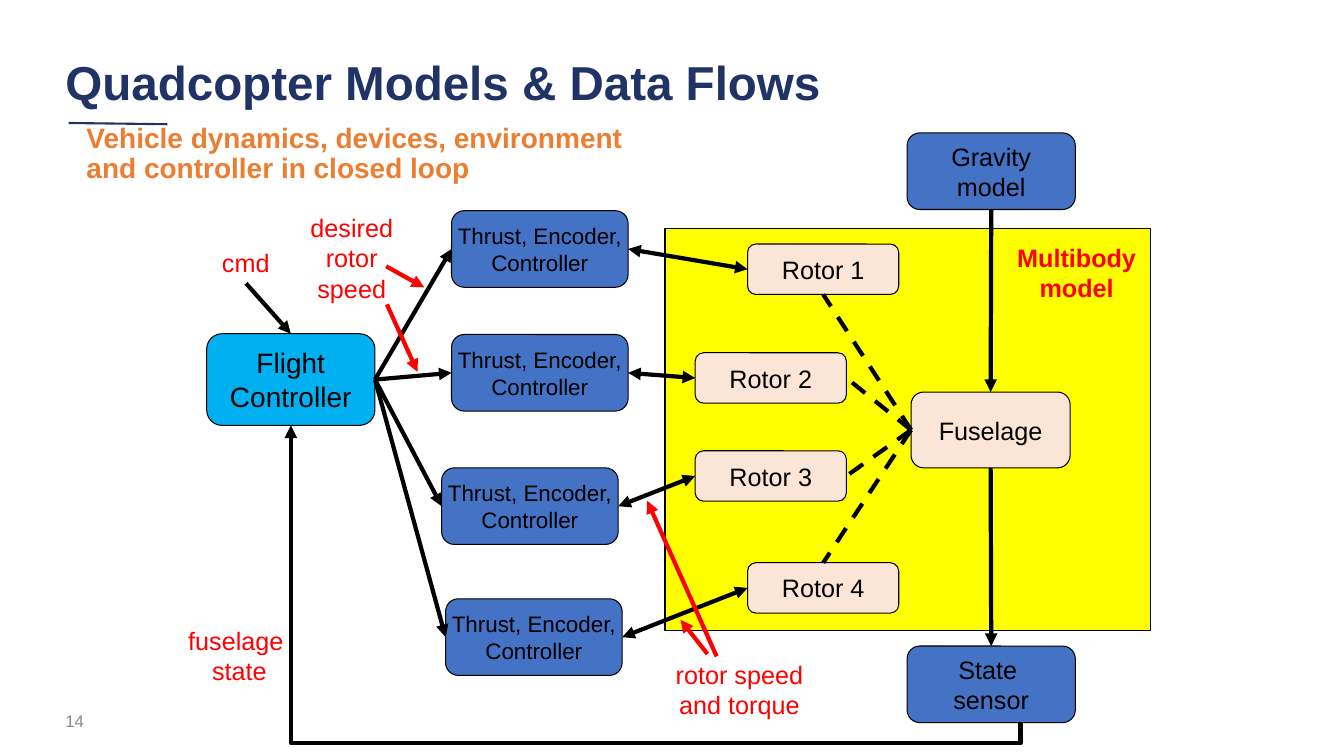
import pptx
import pptx.dml.color
import pptx.enum.dml
import pptx.enum.shapes
import pptx.enum.text
import pptx.oxml
import pptx.oxml.ns
import pptx.util
from pptx.util import Cm

SHAPE = pptx.enum.shapes.MSO_SHAPE
CONNECTOR = pptx.enum.shapes.MSO_CONNECTOR
ALIGN = pptx.enum.text.PP_ALIGN
ANCHOR = pptx.enum.text.MSO_ANCHOR
TOP, LEFT, BOTTOM, RIGHT = range(4)
BLACK, RED, NAVY, BLUE, PEACH = "000000", "FF0000", "213265", "4472C4", "FBE5D6"


def rgb(color):
    return pptx.dml.color.RGBColor.from_string(color)


def write(shape, lines, size, color, bold=False, align=ALIGN.CENTER,
          anchor=ANCHOR.MIDDLE, wrap=False, spacing=None):
    frame = shape.text_frame
    frame.word_wrap = wrap
    frame.vertical_anchor = anchor
    for index, line in enumerate(lines):
        paragraph = frame.paragraphs[0] if index == 0 else frame.add_paragraph()
        paragraph.alignment = align
        if spacing:
            paragraph.line_spacing = spacing
        run = paragraph.add_run()
        run.text = line
        run.font.name = "Arial"
        run.font.size = pptx.util.Pt(size)
        run.font.bold = bold
        run.font.color.rgb = rgb(color)


def add_label(slide, x, y, width, height, lines, size=18, color=RED,
              anchor=ANCHOR.TOP, **style):
    label = slide.shapes.add_textbox(Cm(x), Cm(y), Cm(width), Cm(height))
    write(label, lines, size, color, anchor=anchor, **style)


def add_block(slide, x, y, width, height, fill, lines=(), size=18,
              outline=SHAPE.ROUNDED_RECTANGLE):
    block = slide.shapes.add_shape(outline, Cm(x), Cm(y), Cm(width), Cm(height))
    block.shadow.inherit = False
    block.fill.solid()
    block.fill.fore_color.rgb = rgb(fill)
    block.line.color.rgb = rgb(BLACK)
    block.line.width = pptx.util.Pt(0.75)
    write(block, lines, size, BLACK)
    return block


def add_line(slide, start, end, color=BLACK, width=3, arrows=("tailEnd",),
             dashed=False, kind=CONNECTOR.STRAIGHT):
    line = slide.shapes.add_connector(kind, *start, *end)
    line.line.color.rgb = rgb(color)
    line.line.width = pptx.util.Pt(width)
    if dashed:
        line.line.dash_style = pptx.enum.dml.MSO_LINE.DASH
    stroke = line.line._get_or_add_ln()
    for arrow in arrows:
        stroke.append(pptx.oxml.parse_xml(
            f'<a:{arrow} {pptx.oxml.ns.nsdecls("a")} type="triangle"/>'))
    line._element.spPr.append(pptx.oxml.parse_xml(
        f'<a:effectLst {pptx.oxml.ns.nsdecls("a")}/>'))
    return line


def link(slide, source, source_side, target, target_side, **style):
    line = add_line(slide, (0, 0), (0, 0), **style)
    line.begin_connect(source, source_side)
    line.end_connect(target, target_side)


def point(x, y):
    return Cm(x), Cm(y)


def header(slide, x, y):
    add_line(slide, point(x + 0.33, y + 1.93), point(x + 2.82, y + 1.96),
             NAVY, 1.5, arrows=())
    add_label(slide, x, y, 28.24, 1.93, ["Quadcopter Models & Data Flows"], 34, NAVY,
              ANCHOR.MIDDLE, bold=True, align=ALIGN.LEFT, wrap=True, spacing=0.9)
    add_label(slide, x + 0.53, y + 1.83, 15.32, 1.7,
              ["Vehicle dynamics, devices, environment and controller in closed loop"],
              20, "ED7D31", bold=True, align=ALIGN.LEFT, wrap=True, spacing=0.9)


def page_number(slide, x, y):
    add_label(slide, x, y, 7.62, 1.02, ["14"], 12, "888888", ANCHOR.MIDDLE,
              align=ALIGN.LEFT, wrap=True)


def multibody_model(slide, x, y, width, height):
    add_block(slide, x, y, width, height, "FFFF00", outline=SHAPE.RECTANGLE)
    add_label(slide, x + 8.61, y + 0.2, 3.53, 1.8, ["Multibody", "model"], bold=True)
    fuselage = add_block(slide, x + 6.2, y + 4.11, 4.01, 1.91, PEACH, ["Fuselage"])
    places = [(2.08, 0.38, BOTTOM), (0.76, 3.12, RIGHT),
              (0.76, 5.59, RIGHT), (2.08, 8.41, TOP)]
    rotors = []
    for number, (dx, dy, side) in enumerate(places, 1):
        rotor = add_block(slide, x + dx, y + dy, 3.81, 1.27, PEACH, [f"Rotor {number}"])
        link(slide, fuselage, LEFT, rotor, side, arrows=(), dashed=True)
        rotors.append(rotor)
    return fuselage, rotors


def rotor_controllers(slide, x, y, rotors):
    controllers = []
    places = [(0.25, 0), (0.25, 3.12), (0, 6.48), (0.1, 9.78)]
    for (dx, dy), rotor in zip(places, rotors):
        controller = add_block(slide, x + dx, y + dy, 4.45, 1.93, BLUE,
                               ["Thrust, Encoder,", "Controller"], 16)
        link(slide, controller, RIGHT, rotor, LEFT, arrows=("headEnd", "tailEnd"))
        controllers.append(controller)
    return controllers


def environment(slide, x, y, height, fuselage):
    gravity = add_block(slide, x, y, 4.24, 1.93, BLUE, ["Gravity", "model"])
    sensor = add_block(slide, x, y + height - 1.93, 4.24, 1.93, BLUE,
                       ["State ", "sensor"])
    link(slide, gravity, BOTTOM, fuselage, TOP)
    link(slide, fuselage, BOTTOM, sensor, TOP)
    return sensor


def flight_control(slide, x, y, controllers):
    flight = add_block(slide, x + 0.74, y + 3.18, 4.24, 2.31, "00B0F0",
                       ["Flight", "Controller"], 20)
    for controller in controllers:
        link(slide, flight, RIGHT, controller, LEFT)
    add_label(slide, x + 0.86, y + 0.89, 1.73, 1.02, ["cmd"])
    add_line(slide, point(x + 1.73, y + 1.91), point(x + 2.86, y + 3.18))
    add_label(slide, x + 2.87, y, 3.05, 2.57, ["desired rotor speed"], wrap=True)
    add_line(slide, point(x + 5.28, y + 2.44), point(x + 6.05, y + 4.14), RED)
    add_line(slide, point(x + 5.26, y + 1.48), point(x + 6.22, y + 2.01), RED)
    add_label(slide, x, y + 10.39, 2.95, 1.8, ["fuselage", " state"])
    return flight


def rotor_feedback(slide, x, y):
    add_label(slide, x, y + 3.86, 4.85, 1.8, ["rotor speed and torque"], wrap=True)
    add_line(slide, point(x + 1.62, y + 3.86), point(x + 0.94, y + 3), RED)
    add_line(slide, point(x + 1.85, y + 3.92), point(x + 0.1, y), RED)


def state_feedback(slide, flight, sensor):
    left, top = flight.left + flight.width // 2, flight.top + flight.height
    right, bottom = sensor.left + Cm(2.86), sensor.top + sensor.height
    run, drop = right - left, bottom - top
    middle_x, middle_y = (left + right) // 2, (top + bottom) // 2
    loop = add_line(slide, (middle_x + drop // 2, middle_y - run // 2),
                    (middle_x - drop // 2, middle_y + run // 2),
                    arrows=("headEnd",), kind=CONNECTOR.ELBOW)
    properties = loop._element.spPr
    properties.find(pptx.oxml.ns.qn("a:xfrm")).set("rot", str(270 * 60000))
    guides = properties.find(pptx.oxml.ns.qn("a:prstGeom")).get_or_add_avLst()
    guides.append(pptx.oxml.parse_xml(
        f'<a:gd {pptx.oxml.ns.nsdecls("a")} name="adj1" fmla="val 106900"/>'))


def main():
    deck = pptx.Presentation()
    deck.slide_width, deck.slide_height = Cm(33.87), Cm(19.05)
    slide = deck.slides.add_slide(deck.slide_layouts[6])
    header(slide, 1.4, 1.17)
    page_number(slide, 1.4, 17.65)
    fuselage, rotors = multibody_model(slide, 16.76, 5.77, 12.24, 10.11)
    controllers = rotor_controllers(slide, 11.13, 5.31, rotors)
    sensor = environment(slide, 22.86, 3.35, 14.86, fuselage)
    flight = flight_control(slide, 4.47, 5.23, controllers)
    state_feedback(slide, flight, sensor)
    rotor_feedback(slide, 16.21, 12.62)
    deck.save("out.pptx")


if __name__ == "__main__":
    main()
